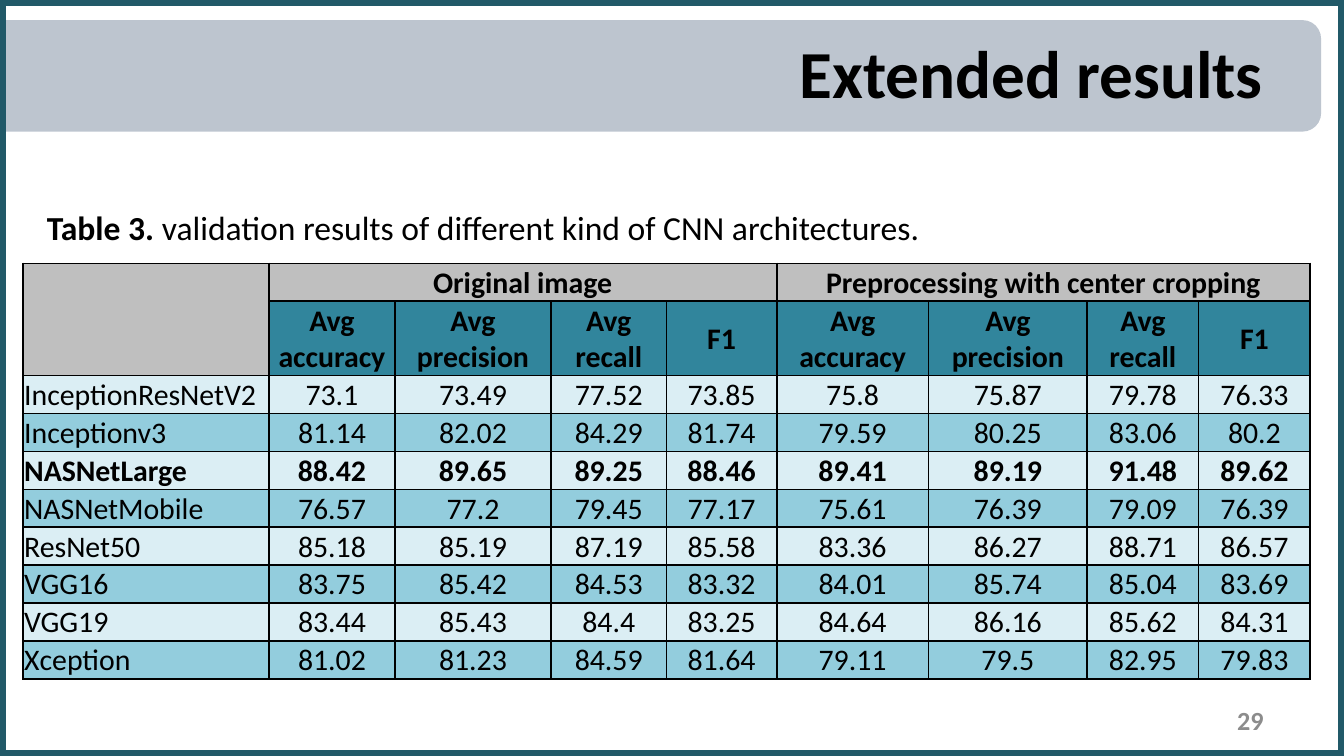
from lxml import etree
from pptx import Presentation
from pptx.dml.color import RGBColor
from pptx.enum import shapes, text
from pptx.oxml import ns
from pptx.util import Inches, Pt

METRICS = ["Avg accuracy", "Avg precision", "Avg recall", "F1"]
GROUPS = ["Original image", "Preprocessing with center cropping"]
RESULTS = [
    ("InceptionResNetV2", "73.1 73.49 77.52 73.85 75.8 75.87 79.78 76.33"),
    ("Inceptionv3", "81.14 82.02 84.29 81.74 79.59 80.25 83.06 80.2"),
    ("NASNetLarge", "88.42 89.65 89.25 88.46 89.41 89.19 91.48 89.62"),
    ("NASNetMobile", "76.57 77.2 79.45 77.17 75.61 76.39 79.09 76.39"),
    ("ResNet50", "85.18 85.19 87.19 85.58 83.36 86.27 88.71 86.57"),
    ("VGG16", "83.75 85.42 84.53 83.32 84.01 85.74 85.04 83.69"),
    ("VGG19", "83.44 85.43 84.4 83.25 84.64 86.16 85.62 84.31"),
    ("Xception", "81.02 81.23 84.59 81.64 79.11 79.5 82.95 79.83"),
]
BEST = "NASNetLarge"
COLUMN_WIDTHS = [1.83, 0.94, 1.16, 0.86, 0.82, 1.13, 1.18, 0.83, 0.83]
ROW_HEIGHT = 0.18  # a minimum: rows grow to fit their text
BANDS = ["DBEEF4", "93CDDD"]
LEFT, CENTER, RIGHT = (text.PP_ALIGN.LEFT, text.PP_ALIGN.CENTER,
                       text.PP_ALIGN.RIGHT)
MIDDLE, BOTTOM = text.MSO_ANCHOR.MIDDLE, text.MSO_ANCHOR.BOTTOM


def rgb(color):
    return RGBColor.from_string(color)


def style(p, size, bold=None, color="000000", align=LEFT):
    p.alignment = align
    p.font.name = "Calibri"
    p.font.size = Pt(size)
    p.font.bold = bold
    p.font.color.rgb = rgb(color)


def add_title(slide, x, y, w, h):
    """Title over a translucent band that runs in from the left edge."""
    band = slide.shapes.add_shape(
        shapes.MSO_SHAPE.ROUNDED_RECTANGLE,
        Inches(x - 0.92), Inches(y + 0.09), Inches(w + 1.25), Inches(0.83))
    band.shadow.inherit = False
    band.line.fill.background()
    band.fill.solid()
    band.fill.fore_color.rgb = rgb("254061")
    color = band.fill._xPr.find(".//" + ns.qn("a:srgbClr"))
    etree.SubElement(color, ns.qn("a:alpha"), val="30000")

    title = slide.shapes.title
    title.left, title.top = Inches(x), Inches(y)
    title.width, title.height = Inches(w), Inches(h)
    title._element.addprevious(band._element)
    tf = title.text_frame
    tf.text = "Extended results"
    tf.vertical_anchor = MIDDLE
    style(tf.paragraphs[0], 36, True, align=RIGHT)


def border_cell(cell):
    tc_pr = cell._tc.get_or_add_tcPr()
    for i, side in enumerate(("lnL", "lnR", "lnT", "lnB")):
        line = etree.Element(ns.qn("a:" + side), w=str(Pt(1)))
        fill = etree.SubElement(line, ns.qn("a:solidFill"))
        etree.SubElement(fill, ns.qn("a:srgbClr"), val="000000")
        tc_pr.insert(i, line)


def fill_cell(cell, words, color, bold=False, align=CENTER, anchor=BOTTOM):
    cell.margin_left = cell.margin_right = cell.margin_top = Inches(0.01)
    cell.margin_bottom = 0
    cell.vertical_anchor = anchor
    cell.fill.solid()
    cell.fill.fore_color.rgb = rgb(color)
    border_cell(cell)
    cell.text = words
    style(cell.text_frame.paragraphs[0], 16, bold, align=align)


def add_results_table(slide, x, y):
    rows, cols = len(RESULTS) + 2, len(COLUMN_WIDTHS)
    table = slide.shapes.add_table(
        rows, cols, Inches(x), Inches(y),
        Inches(sum(COLUMN_WIDTHS)), Inches(3.02)).table
    for column, width in zip(table.columns, COLUMN_WIDTHS):
        column.width = Inches(width)
    for row in table.rows:
        row.height = Inches(ROW_HEIGHT)

    span = len(METRICS)
    group_row = [""]
    for group in GROUPS:
        group_row += [group] + [""] * (span - 1)
    for c, group in enumerate(group_row):
        fill_cell(table.cell(0, c), group, "BFBFBF", True)
    fill_cell(table.cell(1, 0), "", "BFBFBF", True)
    for c, metric in enumerate(METRICS * len(GROUPS), 1):
        fill_cell(table.cell(1, c), metric, "31859C", True, anchor=MIDDLE)
    table.cell(0, 0).merge(table.cell(1, 0))
    for c in range(1, cols, span):
        table.cell(0, c).merge(table.cell(0, c + span - 1))

    for i, (model, values) in enumerate(RESULTS):
        for c, words in enumerate([model] + values.split()):
            fill_cell(table.cell(i + 2, c), words, BANDS[i % 2],
                      model == BEST, CENTER if c else LEFT)


def add_frame(slide, width, height):
    frame = slide.shapes.add_shape(shapes.MSO_SHAPE.RECTANGLE, 0, 0,
                                   width, height)
    frame.shadow.inherit = False
    frame.fill.background()
    frame.line.color.rgb = rgb("215968")
    frame.line.width = Pt(6)


def add_text_box(slide, x, y, w, h):
    tf = slide.shapes.add_textbox(Inches(x), Inches(y), Inches(w),
                                  Inches(h)).text_frame
    tf.word_wrap = True
    return tf


def add_caption(slide, x, y, w, h):
    p = add_text_box(slide, x, y, w, h).paragraphs[0]
    style(p, 18)
    for words, bold in (
            ("Table 3. ", True),
            ("validation results of different kind of CNN architectures.",
             False)):
        r = p.add_run()
        r.text = words
        r.font.bold = bold


def add_page_number(slide, x, y, w, h):
    tf = add_text_box(slide, x, y, w, h)
    tf.vertical_anchor = MIDDLE
    tf.text = "29"
    style(tf.paragraphs[0], 14, True, "8C8C8C", RIGHT)


def main():
    prs = Presentation()
    prs.slide_width = Inches(10)
    prs.slide_height = prs.slide_width * 9 // 16
    slide = prs.slides.add_slide(prs.slide_layouts[5])
    add_title(slide, 0.5, 0.06, 9, 0.94)
    add_results_table(slide, 0.17, 1.96)
    add_frame(slide, prs.slide_width, prs.slide_height)
    add_caption(slide, 0.25, 1.49, 8.58, 0.4)
    add_page_number(slide, 7.17, 5.21, 2.33, 0.3)
    prs.save("out.pptx")


if __name__ == "__main__":
    main()
